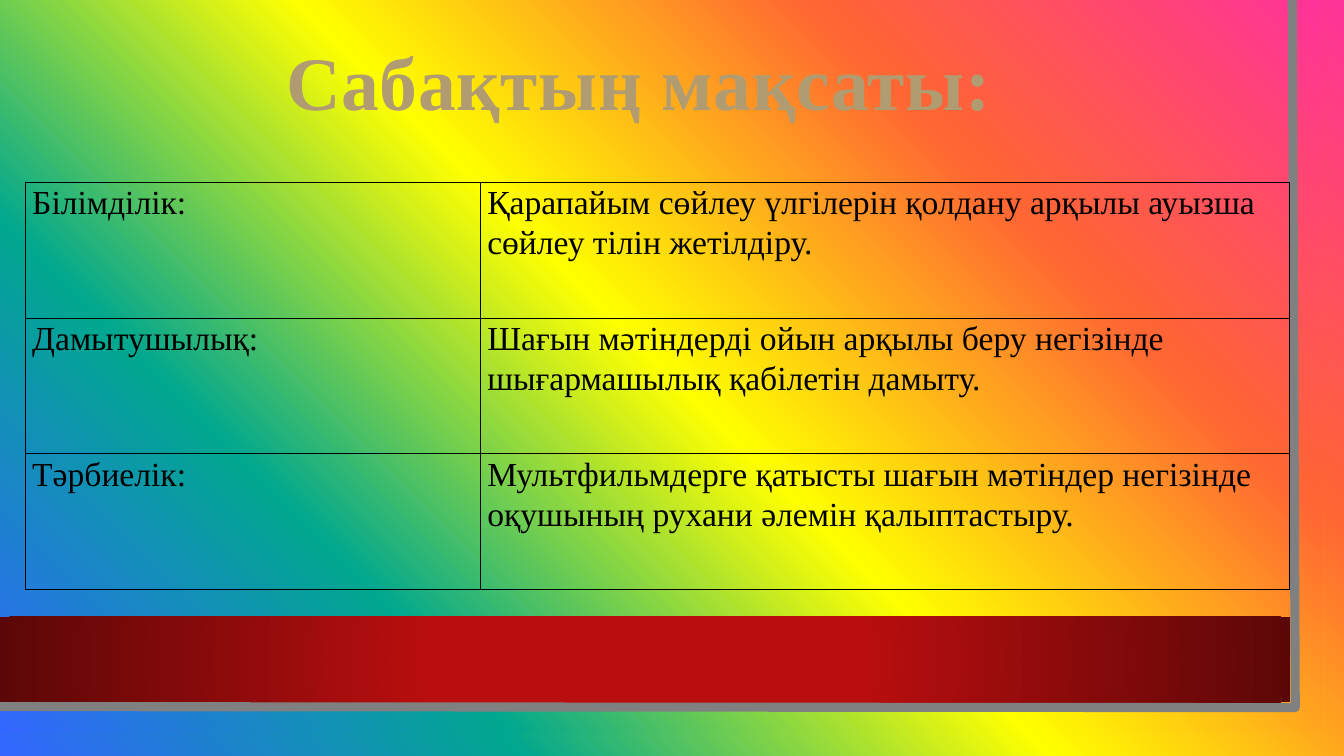
from dataclasses import dataclass

from lxml.etree import SubElement
from pptx import Presentation
from pptx.dml.color import RGBColor
from pptx.enum.shapes import MSO_SHAPE
from pptx.enum.text import MSO_ANCHOR, MSO_AUTO_SIZE, PP_ALIGN
from pptx.oxml.ns import qn
from pptx.util import Inches, Pt


@dataclass(frozen=True)
class Theme:
    font: str = "Times New Roman"
    title_size: int = 54
    body_size: int = 24
    ink: str = "000000"
    frame: str = "808080"
    rainbow: tuple = ((0, "FF3399"), (25, "FF6633"), (50, "FFFF00"),
                      (75, "01A78F"), (100, "3366FF"))
    band: tuple = ((34, "B80E0F"), (100, "5C0707"))
    title: tuple = ((25, "B19C72"), (100, "7F6E4F"))


THEME = Theme()
WIDTH, HEIGHT = Inches(13.333), Inches(7.5)

GOALS = (
    ("Білімділік:",
     "Қарапайым сөйлеу үлгілерін қолдану арқылы ауызша сөйлеу тілін жетілдіру."),
    ("Дамытушылық:",
     "Шағын мәтіндерді ойын арқылы беру негізінде шығармашылық қабілетін дамыту."),
    ("Тәрбиелік:",
     "Мультфильмдерге қатысты шағын мәтіндер негізінде оқушының рухани әлемін қалыптастыру."),
)


def inches(*lengths):
    return [Inches(length) for length in lengths]


def apply_gradient(fill, holder, stops, angle=None):
    """Fill the holder with a linear gradient, or a radial one without an angle."""
    fill.solid()
    fill.fore_color.rgb = RGBColor.from_string(stops[0][1])
    solid = holder.find(qn("a:solidFill"))
    gradient = holder.makeelement(qn("a:gradFill"), {"rotWithShape": "1"})
    stop_list = SubElement(gradient, qn("a:gsLst"))
    for place, color in stops:
        stop = SubElement(stop_list, qn("a:gs"), pos=str(place * 1000))
        SubElement(stop, qn("a:srgbClr"), val=color)
    if angle is None:
        radial = SubElement(gradient, qn("a:path"), {"path": "circle"})
        SubElement(radial, qn("a:fillToRect"),
                   {side: "50000" for side in "ltrb"})
    else:
        SubElement(gradient, qn("a:lin"), ang=str(angle * 60000), scaled="0")
    holder.replace(solid, gradient)


def add_block(page, box, stops, angle=None):
    block = page.shapes.add_shape(MSO_SHAPE.RECTANGLE, *box)
    block.shadow.inherit = False
    block.line.fill.background()
    apply_gradient(block.fill, block._element.spPr, stops, angle)


def add_backdrop(page, box):
    left, top, width, height = box
    background = page.background.fill
    background.solid()
    apply_gradient(background, page._element.find(".//" + qn("p:bgPr")),
                   THEME.rainbow, 135)

    # Rainbow panel and red band
    add_block(page, (left, top, int(width * 0.9825), int(height * 0.9693)),
              THEME.rainbow, 135)
    add_block(page, (left, top + int(height * 0.816),
                     int(width * 0.96), int(height * 0.1133)), THEME.band)

    # Grey edge along the right and the bottom
    right, bottom = left + int(width * 0.9638), top + int(height * 0.936)
    builder = page.shapes.build_freeform(right - Inches(0.03), top)
    builder.add_line_segments(
        [(right, bottom), (left - Inches(0.03), bottom - Inches(0.01))], close=False)
    edge = builder.convert_to_shape()
    edge.shadow.inherit = False
    edge.fill.background()
    edge.line.color.rgb = RGBColor.from_string(THEME.frame)
    edge.line.width = Pt(6.5)


def add_title(page, box, text):
    frame = page.shapes.add_textbox(*box).text_frame
    frame.word_wrap = False
    frame.auto_size = MSO_AUTO_SIZE.SHAPE_TO_FIT_TEXT
    frame.vertical_anchor = MSO_ANCHOR.MIDDLE
    para = frame.paragraphs[0]
    para.alignment = PP_ALIGN.CENTER
    span = para.add_run()
    span.text = text
    span.font.name = THEME.font
    span.font.size = Pt(THEME.title_size)
    span.font.bold = True
    properties = span._r.get_or_add_rPr()
    properties.set("spc", "50")
    apply_gradient(span.font.fill, properties, THEME.title, 90)


def add_borders(cell):
    properties = cell._tc.get_or_add_tcPr()
    for index, side in enumerate(("lnL", "lnR", "lnT", "lnB")):
        line = properties.makeelement(qn("a:" + side), {"w": str(Pt(1))})
        color = SubElement(line, qn("a:solidFill"))
        SubElement(color, qn("a:srgbClr"), val=THEME.ink)
        properties.insert(index, line)


def fill_cell(cell, text):
    cell.fill.background()
    add_borders(cell)
    cell.margin_left = cell.margin_right = Inches(0.07)
    cell.margin_top = cell.margin_bottom = 0
    para = cell.text_frame.paragraphs[0]
    para.line_spacing = 1.07
    span = para.add_run()
    span.text = text
    span.font.name = THEME.font
    span.font.size = Pt(THEME.body_size)
    span.font.color.rgb = RGBColor.from_string(THEME.ink)


def add_goals(page, box, goals):
    table = page.shapes.add_table(len(goals), 2, *box).table
    table.first_row = table.horz_banding = False
    for column, share in zip(table.columns, (0.36, 0.64)):
        column.width = int(box[2] * share)
    for row, texts in zip(table.rows, goals):
        row.height = int(box[3] / len(goals))
        for cell, text in zip(row.cells, texts):
            fill_cell(cell, text)


def main():
    deck = Presentation()
    deck.slide_width, deck.slide_height = WIDTH, HEIGHT
    page = deck.slides.add_slide(deck.slide_layouts[6])
    add_backdrop(page, (0, 0, WIDTH, HEIGHT))
    add_title(page, inches(0.94, 0.21, 10.99, 1.17), "Сабақтың мақсаты: ")
    add_goals(page, inches(0.25, 1.81, 12.54, 4.04), GOALS)
    deck.save("out.pptx")


if __name__ == "__main__":
    main()
